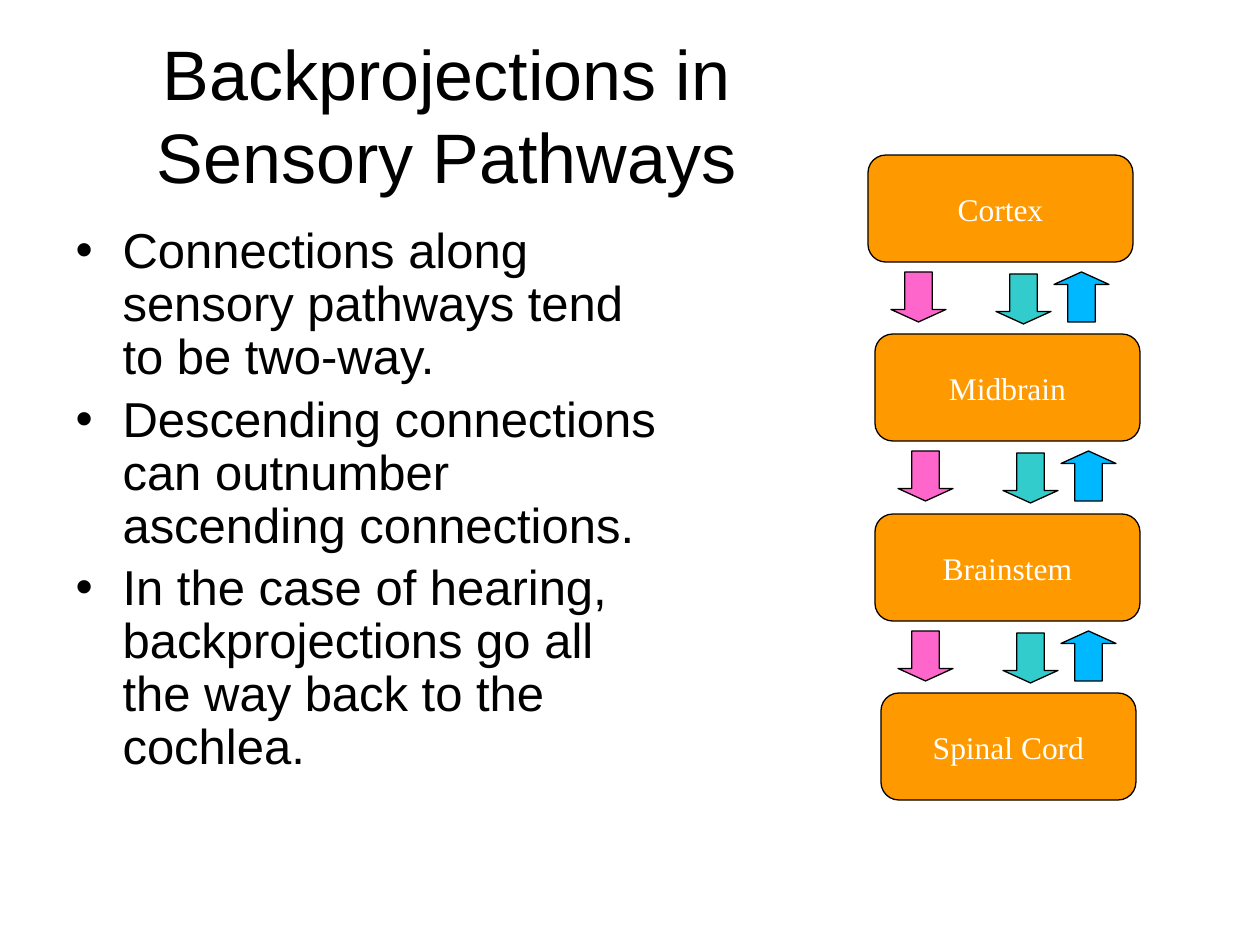
from lxml.etree import SubElement
from pptx import Presentation
from pptx.dml.color import RGBColor
from pptx.enum.shapes import MSO_SHAPE as Shape
from pptx.enum.text import MSO_ANCHOR as Anchor, MSO_AUTO_SIZE as AutoSize, PP_ALIGN as Align
from pptx.oxml.ns import qn
from pptx.util import Pt

TITLE = "Backprojections in Sensory Pathways"
BULLETS = [
    "Connections along sensory pathways tend to be two-way.",
    "Descending connections can outnumber ascending connections.",
    "In the case of hearing, backprojections go all the way back to the cochlea.",
]
STAGES = [
    ("Cortex", 868, 155, 265),
    ("Midbrain", 875, 334, 265),
    ("Brainstem", 875, 514, 265),
    ("Spinal Cord", 881, 693, 255),
]
STAGE_HEIGHT = 107
ARROWS = [
    (Shape.DOWN_ARROW, 23, 117, "FF66CC"),
    (Shape.DOWN_ARROW, 128, 119, "33CCCC"),
    (Shape.UP_ARROW, 186, 117, "00B8FF"),
]
ARROW_WIDTH, ARROW_HEIGHT = 55, 50
SCALE = 914400 / 126


def px(value):
    return round(value * SCALE)


def color(value):
    return RGBColor.from_string(value)


def place(shape, left, top, width, height):
    shape.left, shape.top = px(left), px(top)
    shape.width, shape.height = px(width), px(height)


def add_run(paragraph, text, size, font_name, font_color):
    run = paragraph.add_run()
    run.text = text
    run.font.size = Pt(size)
    run.font.name = font_name
    run.font.color.rgb = color(font_color)


def add_outlined(slide, kind, left, top, width, height, fill):
    shape = slide.shapes.add_shape(kind, px(left), px(top), px(width), px(height))
    shape.shadow.inherit = False
    shape.fill.solid()
    shape.fill.fore_color.rgb = color(fill)
    shape.line.color.rgb = color("000000")
    shape.line.width = Pt(0.75)
    return shape


def add_title(slide):
    title = slide.shapes.title
    place(title, 64, 35, 765, 158)
    frame = title.text_frame
    frame.auto_size = AutoSize.NONE
    frame.vertical_anchor = Anchor.MIDDLE
    paragraph = frame.paragraphs[0]
    paragraph.alignment = Align.CENTER
    add_run(paragraph, TITLE, 40, "Arial", "000000")


def add_bullets(slide):
    body = slide.placeholders[1]
    place(body, 63, 220, 616, 639)
    frame = body.text_frame
    frame.auto_size = AutoSize.NONE
    for index, text in enumerate(BULLETS):
        paragraph = frame.add_paragraph() if index else frame.paragraphs[0]
        properties = paragraph._p.get_or_add_pPr()
        properties.set("marL", str(px(47)))
        properties.set("indent", str(px(-47)))
        SubElement(properties, qn("a:buChar"), char="•")
        paragraph.line_spacing = 0.9
        paragraph.space_before = Pt(5.6 if index else 0)
        add_run(paragraph, text, 28, "Arial", "000000")


def add_pathway(slide):
    for index, (name, left, top, width) in enumerate(STAGES):
        box = add_outlined(slide, Shape.FLOWCHART_ALTERNATE_PROCESS,
                           left, top, width, STAGE_HEIGHT, "FF9900")
        frame = box.text_frame
        frame.word_wrap = False
        frame.vertical_anchor = Anchor.MIDDLE
        paragraph = frame.paragraphs[0]
        paragraph.alignment = Align.CENTER
        add_run(paragraph, name, 18, "Times New Roman", "FFFFFF")
        if index < len(STAGES) - 1:
            for kind, across, down, fill in ARROWS:
                arrow = add_outlined(slide, kind, left + across, top + down,
                                     ARROW_WIDTH, ARROW_HEIGHT, fill)
                arrow.adjustments[0] = 0.5
                arrow.adjustments[1] = 0.25


def main():
    presentation = Presentation()
    presentation.slide_width, presentation.slide_height = px(1260), px(945)
    slide = presentation.slides.add_slide(presentation.slide_layouts[1])
    add_title(slide)
    add_bullets(slide)
    add_pathway(slide)
    presentation.save("out.pptx")


if __name__ == "__main__":
    main()
